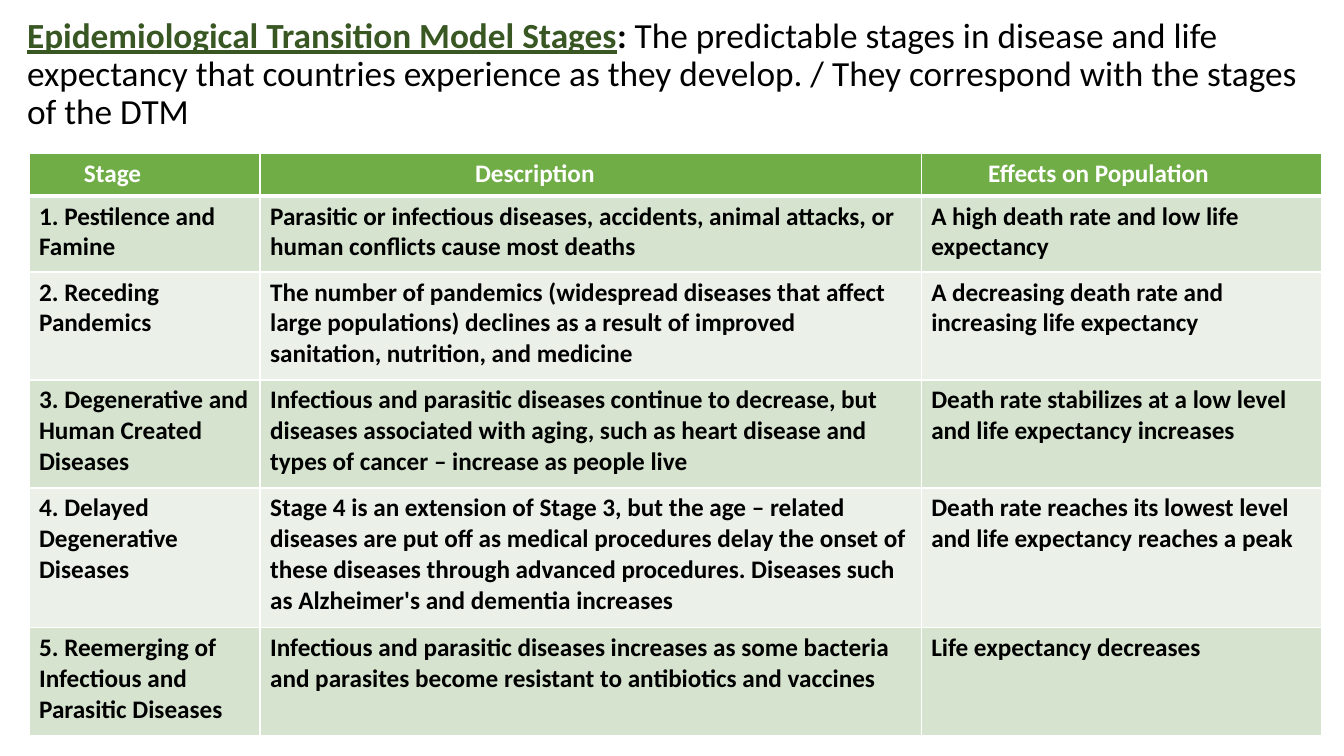
from dataclasses import dataclass

from lxml import etree
from pptx import Presentation
from pptx import util as u
from pptx.dml.color import RGBColor
from pptx.enum import text
from pptx.oxml import ns


@dataclass(frozen=True)
class Theme:
    font: str = "Calibri"
    title_size: float = 25.2
    body_size: float = 18
    ink: str = "000000"
    white: str = "FFFFFF"
    accent: str = "385723"
    header: str = "70AD47"
    bands: tuple = ("D5E3CF", "EBF1E9")
    rule: int = 1
    header_rule: int = 3


def px(n):
    return u.Emu(round(n * 914400 / 100.8))


class Deck:
    def __init__(self, theme):
        self.theme = theme
        self.prs = Presentation()
        self.prs.slide_width = u.Inches(13.33)
        self.prs.slide_height = u.Inches(7.5)
        self.s = None

    def add_slide(self):
        self.s = self.prs.slides.add_slide(self.prs.slide_layouts[5])

    def run(self, p, words, size, color, bold=False, underline=False):
        r = p.add_run()
        r.text = words
        f = r.font
        f.name, f.size, f.bold, f.underline = self.theme.font, u.Pt(size), bold, underline
        f.color.rgb = RGBColor.from_string(color)

    def title(self, x, y, w, h, runs):
        sp = self.s.shapes.title
        sp.left, sp.top, sp.width, sp.height = px(x), px(y), px(w), px(h)
        tf = sp.text_frame
        tf.word_wrap = True
        tf.auto_size = text.MSO_AUTO_SIZE.NONE
        tf.vertical_anchor = text.MSO_ANCHOR.MIDDLE
        p = tf.paragraphs[0]
        p.alignment = text.PP_ALIGN.LEFT
        p.line_spacing = 0.9
        for words, color, bold, underline in runs:
            self.run(p, words, self.theme.title_size, color, bold, underline)

    def borders(self, cell, top, bottom):
        tc_pr = cell._tc.get_or_add_tcPr()
        side = self.theme.rule
        sides = (("L", side), ("R", side), ("T", top), ("B", bottom))
        for i, (name, width) in enumerate(sides):
            ln = etree.Element(ns.qn(f"a:ln{name}"), w=str(u.Pt(width)))
            fill = etree.SubElement(ln, ns.qn("a:solidFill"))
            etree.SubElement(fill, ns.qn("a:srgbClr"), val=self.theme.white)
            tc_pr.insert(i, ln)

    def table(self, x, y, widths, heights, rows, header_indents):
        t = self.theme
        frame = self.s.shapes.add_table(len(rows), len(widths), px(x), px(y),
                                        px(sum(widths)), px(sum(heights)))
        table = frame.table
        for column, width in zip(table.columns, widths):
            column.width = px(width)
        for i, (row, height) in enumerate(zip(rows, heights)):
            table.rows[i].height = px(height)
            fill = t.bands[(i - 1) % 2] if i else t.header
            for j, words in enumerate(row):
                cell = table.cell(i, j)
                cell.fill.solid()
                cell.fill.fore_color.rgb = RGBColor.from_string(fill)
                self.borders(cell, t.header_rule if i == 1 else t.rule,
                             t.rule if i else t.header_rule)
                if i == 0:
                    cell.margin_left = px(10 + header_indents[j])
                self.run(cell.text_frame.paragraphs[0], words, t.body_size,
                         t.ink if i else t.white, bold=True)


STAGES = [
    ("Stage", "Description", "Effects on Population"),
    ("1. Pestilence and Famine",
     "Parasitic or infectious diseases, accidents, animal attacks, or human "
     "conflicts cause most deaths",
     "A high death rate and low life expectancy"),
    ("2. Receding Pandemics",
     "The number of pandemics (widespread diseases that affect large populations) "
     "declines as a result of improved sanitation, nutrition, and medicine",
     "A decreasing death rate and increasing life expectancy"),
    ("3. Degenerative and Human Created Diseases",
     "Infectious and parasitic diseases continue to decrease, but diseases associated "
     "with aging, such as heart disease and types of cancer – increase as people live",
     "Death rate stabilizes at a low level and life expectancy increases"),
    ("4. Delayed Degenerative Diseases",
     "Stage 4 is an extension of Stage 3, but the age – related diseases are put off "
     "as medical procedures delay the onset of these diseases through advanced "
     "procedures. Diseases such as Alzheimer's and dementia increases",
     "Death rate reaches its lowest level and life expectancy reaches a peak"),
    ("5. Reemerging of Infectious and Parasitic Diseases",
     "Infectious and parasitic diseases increases as some bacteria and parasites "
     "become resistant to antibiotics and vaccines",
     "Life expectancy decreases"),
]


def main():
    theme = Theme()
    deck = Deck(theme)
    deck.add_slide()

    # Title: term and definition
    deck.title(17, 20, 1327, 110, [
        ("Epidemiological Transition Model Stages", theme.accent, True, True),
        (": ", theme.ink, True, False),
        ("The predictable stages in disease and life expectancy that countries experience "
         "as they develop. / They correspond with the stages of the DTM",
         theme.ink, False, False),
    ])

    # Table of stages
    deck.table(29, 153, widths=(231, 661, 400), heights=(43, 76, 108, 108, 140, 108),
               rows=STAGES, header_indents=(45, 205, 57))

    deck.prs.save("out.pptx")


if __name__ == "__main__":
    main()
